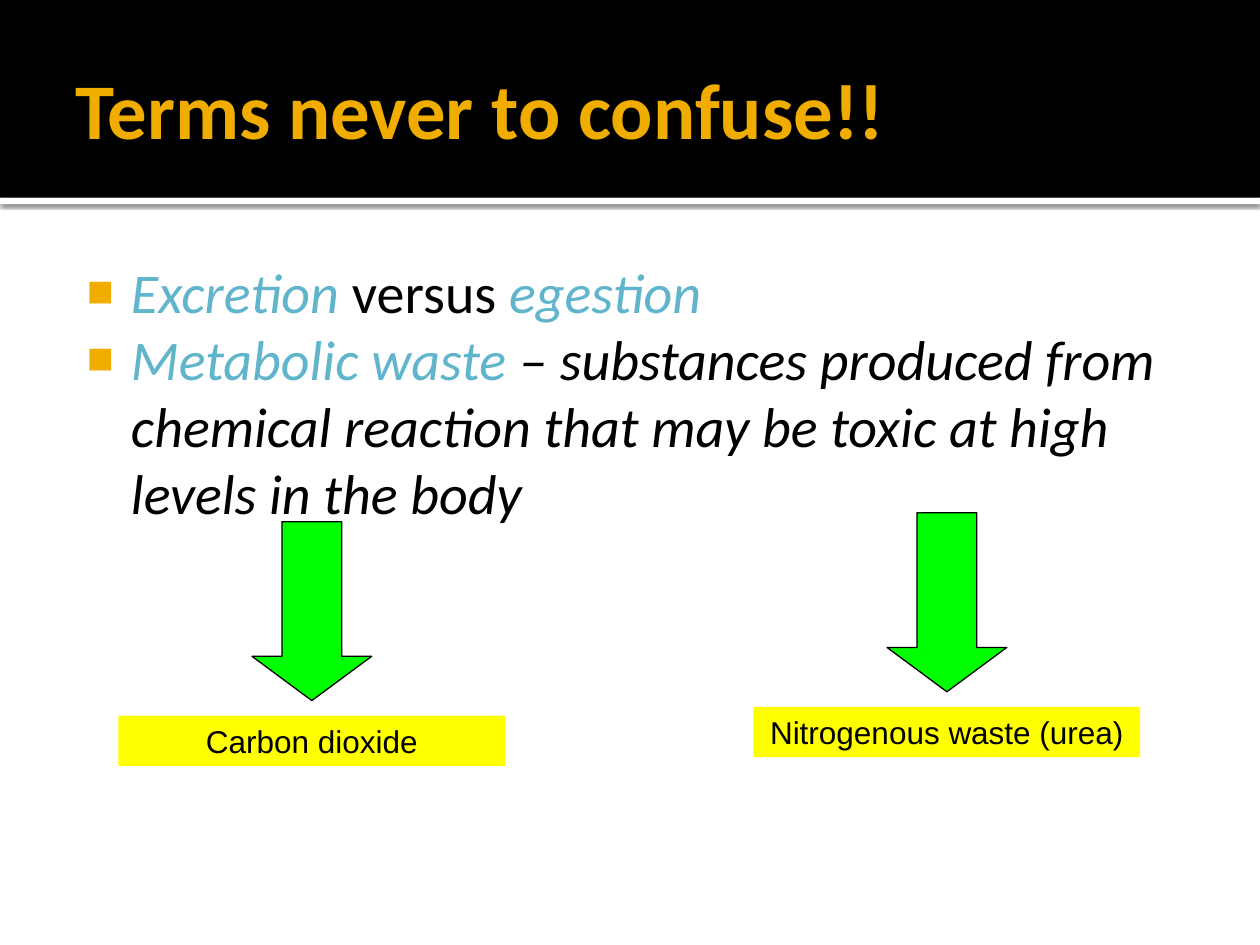
from lxml.etree import SubElement
from pptx import Presentation
from pptx.dml.color import RGBColor
from pptx.enum.shapes import MSO_SHAPE as Shape
from pptx.enum.text import MSO_ANCHOR as Anchor, PP_ALIGN as Align
from pptx.oxml.ns import qn
from pptx.util import Inches, Pt

COLORS = {"black": "000000", "white": "FFFFFF", "gold": "F0AD00",
          "blue": "60B5CC", "green": "00FF00", "yellow": "FFFF00"}
TITLE = {"name": "Calibri", "size": Pt(45), "bold": True}
BODY = {"name": "Calibri", "size": Pt(32)}
LABEL = {"name": "Arial", "size": Pt(18)}
TERMS = [
    [("Excretion", "blue", True), (" versus ", "black", False), ("egestion", "blue", True)],
    [("Metabolic waste ", "blue", True),
     ("– substances produced from chemical reaction that may be toxic "
      "at high levels in the body", "black", True)],
]
WASTES = [("Carbon dioxide", 0.94, 4.14), ("Nitrogenous waste (urea)", 5.98, 4.07)]


def color(name):
    """Return the named colour."""
    return RGBColor.from_string(COLORS[name])


def add_span(para, text, tint, formats):
    """Add a run of text in the given colour and format."""
    span = para.add_run()
    span.text = text
    span.font.color.rgb = color(tint)
    for key, value in formats.items():
        setattr(span.font, key, value)


def add_block(page, kind, box, fill, line=None):
    """Add a filled shape in a box, outlined if a line colour is given."""
    block = page.shapes.add_shape(kind, *map(Inches, box))
    block.shadow.inherit = False
    block.fill.solid()
    block.fill.fore_color.rgb = color(fill)
    if line:
        block.line.color.rgb = color(line)
        block.line.width = Pt(0.75)
    else:
        block.line.fill.background()
    return block


def set_frame(frame, insets, anchor):
    """Set wrapping, insets in inches and anchor of a text frame."""
    left, top, right, bottom = map(Inches, insets)
    formats = {"word_wrap": True, "vertical_anchor": anchor, "margin_left": left,
               "margin_top": top, "margin_right": right, "margin_bottom": bottom}
    for key, value in formats.items():
        setattr(frame, key, value)


def add_shadow(block):
    """Cast a soft shadow straight down from a shape."""
    effects = block._element.spPr.find(qn("a:effectLst"))
    shadow = SubElement(effects, qn("a:outerShdw"), blurRad=str(Pt(2.5)),
                        dist=str(Pt(0.8)), dir="5400000", algn="tl", rotWithShape="0")
    tint = SubElement(shadow, qn("a:srgbClr"), val=COLORS["black"])
    SubElement(tint, qn("a:alpha"), val="60000")


def add_bullet(para):
    """Give a paragraph a hanging gold square bullet."""
    props = para._p.get_or_add_pPr()
    props.set("marL", str(Inches(0.48)))
    props.set("indent", str(Inches(-0.35)))
    tint = SubElement(props, qn("a:buClr"))
    SubElement(tint, qn("a:srgbClr"), val=COLORS["gold"])
    SubElement(props, qn("a:buSzPct"), val="80000")
    SubElement(props, qn("a:buFont"), typeface="Arial")
    SubElement(props, qn("a:buChar"), char="■")


def add_header(page, box):
    """Draw the black title band with its white shadowed rule."""
    left, top, width, height = box
    add_shadow(add_block(page, Shape.RECTANGLE, (left, top + height, width, 0.05), "white"))
    add_block(page, Shape.RECTANGLE, box, "black")
    title = page.shapes.add_textbox(*map(Inches, (left + 0.5, top + 0.17, width - 1, 1.37)))
    set_frame(title.text_frame, (0.1, 0.05, 0.05, 0.05), Anchor.MIDDLE)
    add_span(title.text_frame.paragraphs[0], "Terms never to confuse!!", "gold", TITLE)


def add_terms(page, box):
    """Write the bulleted terms."""
    frame = page.shapes.add_textbox(*map(Inches, box)).text_frame
    set_frame(frame, (0.06, 0.1, 0.1, 0.05), Anchor.TOP)
    for index, term in enumerate(TERMS):
        para = frame.add_paragraph() if index else frame.paragraphs[0]
        add_bullet(para)
        for text, tint, italic in term:
            add_span(para, text, tint, {**BODY, "italic": italic})


def add_waste(page, box, text):
    """Draw a down arrow centred above a yellow label."""
    left, top, width, height = box
    arrow_width, arrow_height, label_height = 0.95, 1.42, 0.4
    arrow_box = (left + (width - arrow_width) / 2, top, arrow_width, arrow_height)
    arrow = add_block(page, Shape.DOWN_ARROW, arrow_box, "green", "black")
    arrow.adjustments[0] = 0.5
    arrow.adjustments[1] = 0.37
    label_box = (left, top + height - label_height, width, label_height)
    label = add_block(page, Shape.RECTANGLE, label_box, "yellow")
    set_frame(label.text_frame, (0.1, 0.05, 0.1, 0.05), Anchor.TOP)
    para = label.text_frame.paragraphs[0]
    para.alignment = Align.CENTER
    add_span(para, text, "black", LABEL)


def main():
    """Build the slide and save the deck."""
    deck = Presentation()
    deck.slide_width, deck.slide_height = Inches(10), Inches(7.5)
    page = deck.slides.add_slide(deck.slide_layouts[6])
    page.background.fill.solid()
    page.background.fill.fore_color.rgb = color("white")
    add_header(page, (0, 0, 10, 1.57))
    add_terms(page, (0.5, 1.94, 9, 5.06))
    for text, left, top in WASTES:
        add_waste(page, (left, top, 3.07, 1.94), text)
    deck.save("out.pptx")


if __name__ == "__main__":
    main()
